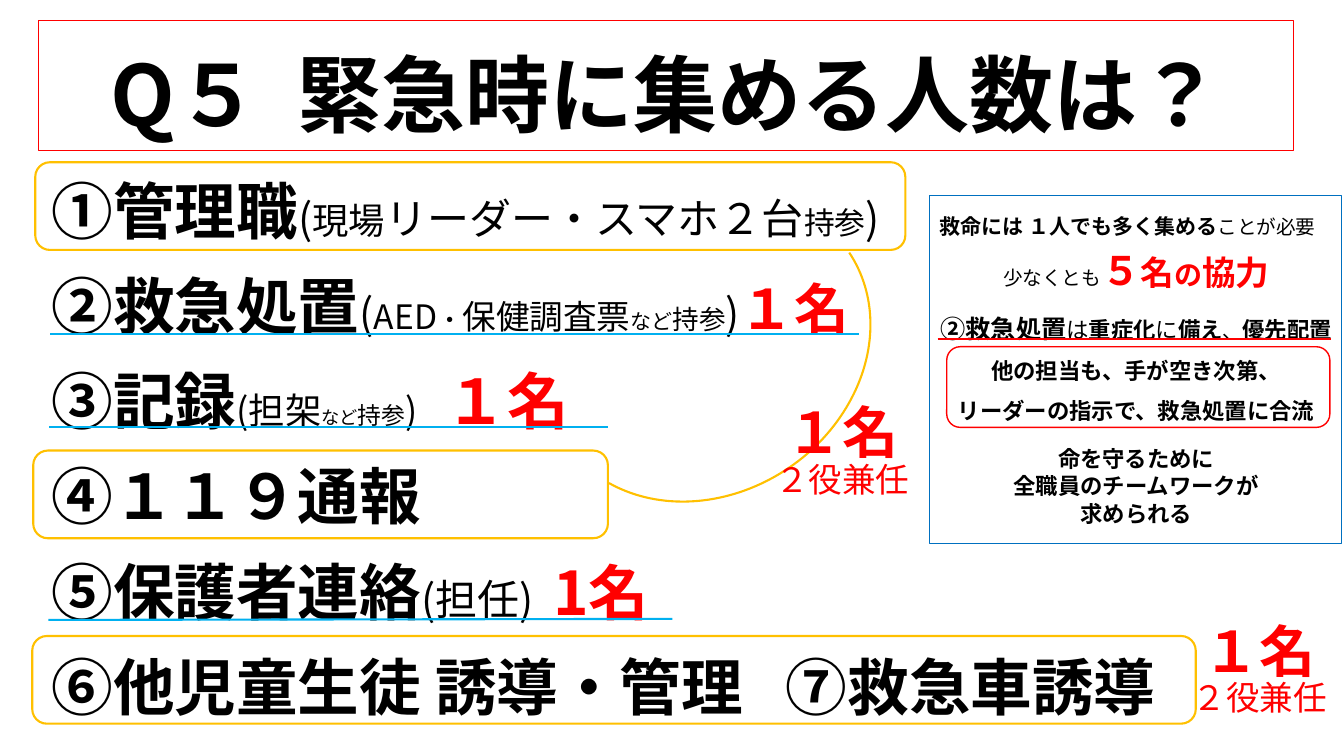
from lxml import etree
from pptx import Presentation
from pptx.dml.color import RGBColor
from pptx.enum.shapes import MSO_CONNECTOR, MSO_SHAPE
from pptx.enum.text import MSO_ANCHOR, MSO_AUTO_SIZE, PP_ALIGN
from pptx.oxml.ns import qn
from pptx.util import Inches, Pt

RECT, ROUND, ARC = MSO_SHAPE.RECTANGLE, MSO_SHAPE.ROUNDED_RECTANGLE, MSO_SHAPE.ARC
LINE = MSO_CONNECTOR.STRAIGHT
TOP, MIDDLE, BOTTOM = MSO_ANCHOR.TOP, MSO_ANCHOR.MIDDLE, MSO_ANCHOR.BOTTOM
LEFT, CENTER = PP_ALIGN.LEFT, PP_ALIGN.CENTER
FONT = "Noto Sans CJK JP"
HUES = {"black": "000000", "red": "FF0000", "gold": "FFC000",
        "sky": "00B0F0", "blue": "0070C0"}

# Runs: text, size, bold, colour, extra width in points
TITLE = [("Q５", 60, True), (" ", 60, True, "black", 13.5), ("緊急時に集める人数は？", 60, True)]
ROLES = [
    [("①管理職", 44, True), ("(", 30), ("現場", 26), ("リーダー・スマホ２台", 30),
     ("持参", 22), (")", 30)],
    [("②救急処置", 44, True), ("(", 30), ("AED", 24), ("・", 18), ("保健調査票", 24),
     ("など", 15), ("持参", 19), (")", 30), ("１名", 39, True, "red")],
    [("③記録", 44, True), ("(担架", 26), ("など", 13), ("持参", 17), (")", 26),
     (" ", 44, True, "black", 10), ("１名", 44, True, "red")],
    [("④１１９通報", 44, True)],
    [("⑤保護者連絡", 44, True), ("(担任)", 30), (" ", 30, True, "black", 7),
     ("1名", 43, True, "red")],
    [("⑥他児童生徒 誘導・管理", 44, True), (" ", 44, True, "black", 20),
     ("⑦救急車誘導", 44, True)],
]
# Panel lines: runs, line height, space before, alignment
ADVICE = [
    ([("救命には １人でも多く集める", 15, True), ("ことが必要", 14)], 21.5, 0, LEFT),
    ([("少なくとも", 14), ("５", 28, True, "red"), ("名", 24, True, "red"),
      ("の", 20, True, "red"), ("協力", 24, True, "red")], 29.5, 10, CENTER),
    ([("②救急処置", 18, True), ("は", 16), ("重症化", 16, True), ("に", 16),
      ("備え", 16, True), ("、", 14), ("優先配置", 16, True)], 32.5, 3, CENTER),
    ([("他の担当も、手が空き次第、", 16, True)], 29, 0, CENTER),
    ([("リーダーの指示で、救急処置に合流", 16, True)], 28.5, 0, CENTER),
    ([("命を守るために", 16, True)], 19.5, 15, CENTER),
    ([("全職員のチームワークが", 16, True)], 19.5, 0, CENTER),
    ([("求められる", 16, True)], 19.5, 0, CENTER),
]


def hue(name):
    return RGBColor.from_string(HUES[name])


def place(shape, box):
    shape.left, shape.top, shape.width, shape.height = map(Inches, box)


def setup(frame, anchor, top=0.05, bottom=0.05):
    frame.word_wrap = True
    frame.auto_size = MSO_AUTO_SIZE.NONE
    frame.vertical_anchor = anchor
    frame.margin_top, frame.margin_bottom = Inches(top), Inches(bottom)


def style(run, size, bold=False, color="black", gap=0):
    font = run.font
    font.name, font.size, font.bold = FONT, Pt(size), bold
    font.color.rgb = hue(color)
    props = run._r.get_or_add_rPr()
    props.set("lang", "ja-JP")
    etree.SubElement(props, qn("a:ea")).set("typeface", FONT)
    if gap:
        props.set("spc", str(int(gap * 100)))


def write(frame, lines):
    """Fill a frame with (runs, line spacing, space before, alignment) lines."""
    for i, (runs, space, before, align) in enumerate(lines):
        para = frame.add_paragraph() if i else frame.paragraphs[0]
        para.alignment, para.line_spacing = align, space
        para.space_before = Pt(before if i else 0)
        for text, *look in runs:
            run = para.add_run()
            run.text = text
            style(run, *look)


def frame(slide, box, color, kind=ROUND, width=1.5):
    """Draw an unfilled outline."""
    shape = slide.shapes.add_shape(kind, *map(Inches, box))
    shape.shadow.inherit = False
    shape.fill.background()
    shape.line.color.rgb = hue(color)
    shape.line.width = Pt(width)
    return shape


def rule(slide, start, end, color):
    line = slide.shapes.add_connector(LINE, *map(Inches, start + end))
    line.line.color.rgb = hue(color)
    line.line.width = Pt(1.5)
    etree.SubElement(line._element.spPr, qn("a:effectLst"))


def heading(slide, box):
    title = slide.shapes.title
    place(title, box)
    title.line.color.rgb = hue("red")
    title.line.width = Pt(0.75)
    setup(title.text_frame, BOTTOM)
    write(title.text_frame, [(TITLE, 0.9, 0, CENTER)])


def roles(slide, box):
    body = slide.placeholders[1]
    place(body, box)
    setup(body.text_frame, TOP)
    write(body.text_frame, [(runs, Pt(58), 10, LEFT) for runs in ROLES])
    for para in body.text_frame.paragraphs:
        props = para._p.get_or_add_pPr()
        props.set("marL", "0")
        props.set("indent", "0")
        etree.SubElement(props, qn("a:buNone"))


def panel(slide, box):
    x, y = box[:2]
    text = frame(slide, box, "blue", RECT, 0.75).text_frame
    setup(text, MIDDLE, bottom=0.09)
    text.margin_left, text.margin_right = Inches(0.1), Inches(0.09)
    write(text, [(runs, Pt(high), before, align) for runs, high, before, align in ADVICE])
    rule(slide, (x + 0.08, y + 1.42), (x + 3.98, y + 1.42), "red")
    frame(slide, (x + 0.17, y + 1.5, 3.8, 0.8), "red", width=1)


def double(slide, box):
    """Label one person holding two roles."""
    text = slide.shapes.add_textbox(*map(Inches, box)).text_frame
    setup(text, TOP, top=0.15)
    write(text, [([("１名", 40, True, "red")], 0.72, 0, CENTER),
                 ([("２役兼任", 24, False, "red")], 0.88, 0, CENTER)])


def link(slide, box):
    """Curve joining the two roles of one person."""
    arc = frame(slide, box, "gold", ARC)
    arc.rotation = 145.6
    arc.adjustments[0], arc.adjustments[1] = 108.33, 204.23


def main():
    deck = Presentation()
    deck.slide_width, deck.slide_height = Inches(13.33), Inches(7.5)
    slide = deck.slides.add_slide(deck.slide_layouts[1])
    heading(slide, (0.38, 0.2, 12.45, 1.29))
    roles(slide, (0.41, 1.59, 12.78, 5.91))
    panel(slide, (9.22, 1.94, 4.09, 3.45))
    for x, y, wide in ((0.33, 4.47, 5.7), (0.35, 1.61, 8.63), (0.32, 6.31, 11.54)):
        frame(slide, (x, y, wide, 0.87), "gold")
    link(slide, (5.32, 2.01, 3.39, 2.88))
    for start, end in (((0.49, 4.24), (6.03, 4.24)), ((0.5, 3.31), (8.52, 3.31)),
                       ((0.48, 6.15), (6.67, 6.14))):
        rule(slide, start, end, "sky")
    for x, y in ((7.54, 3.97), (11.68, 6.14)):
        double(slide, (x, y, 1.63, 1.23))
    deck.save("out.pptx")


if __name__ == "__main__":
    main()
